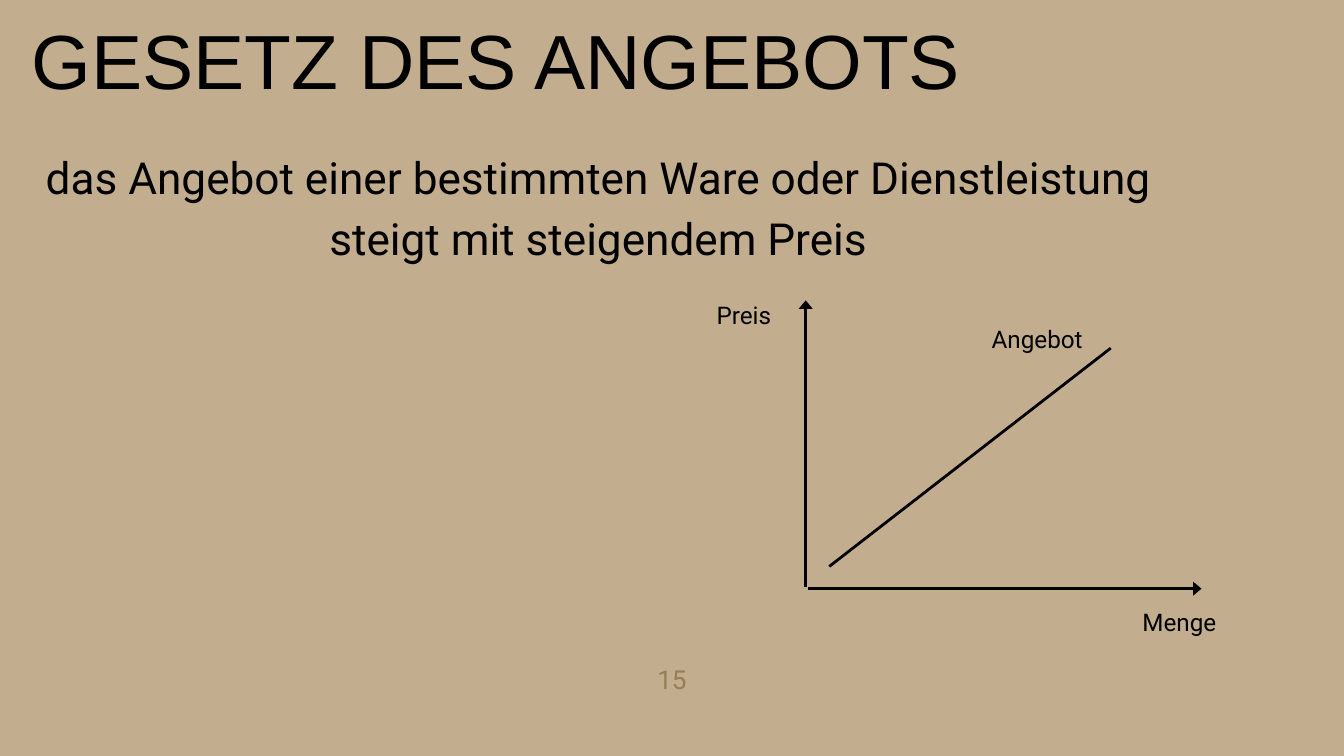
from dataclasses import dataclass

from lxml import etree
from pptx import Presentation
from pptx import util as u
from pptx.dml.color import RGBColor
from pptx.enum import shapes, text
from pptx.oxml.ns import qn


@dataclass(frozen=True)
class Theme:
    background: str = "C2AE8F"
    ink: str = "000000"
    muted: str = "967D55"
    title_font: str = "Arial"
    body_font: str = "Roboto"
    title: float = 82.2
    body: float = 47.3
    label: float = 26
    number: float = 28
    line: float = 3


class SlideBuilder:
    """Draw styled elements on the current slide."""

    def __init__(self, prs, theme):
        self.theme = theme
        self.s = prs.slides.add_slide(prs.slide_layouts[6])
        fill = self.s.background.fill
        fill.solid()
        fill.fore_color.rgb = RGBColor.from_string(theme.background)

    def text(self, content, box, size, spacing, font=None, color=None):
        sp = self.s.shapes.add_textbox(*map(u.Inches, box))
        tf = sp.text_frame
        frame_format = {
            "word_wrap": True,
            "margin_left": 0,
            "margin_right": 0,
            "margin_top": 0,
            "margin_bottom": 0,
            "vertical_anchor": text.MSO_ANCHOR.TOP,
        }
        p = tf.paragraphs[0]
        paragraph_format = {
            "alignment": text.PP_ALIGN.CENTER,
            "line_spacing": u.Pt(spacing),
        }
        r = p.add_run()
        r.text = content
        run_format = {"name": font or self.theme.body_font, "size": u.Pt(size)}
        for target, values in (
            (tf, frame_format),
            (p, paragraph_format),
            (r.font, run_format),
        ):
            for name, value in values.items():
                setattr(target, name, value)
        r.font.color.rgb = RGBColor.from_string(color or self.theme.ink)

    def label(self, content, box):
        self.text(content, box, self.theme.label, 36.4)

    def line(self, start, end, arrow=False):
        points = map(u.Inches, (*start, *end))
        sp = self.s.shapes.add_connector(shapes.MSO_CONNECTOR.STRAIGHT, *points)
        sp.line.color.rgb = RGBColor.from_string(self.theme.ink)
        sp.line.width = u.Pt(self.theme.line)
        if arrow:
            ln = sp.line._get_or_add_ln()
            etree.SubElement(ln, qn("a:tailEnd"), type="triangle", w="lg", len="med")
        etree.SubElement(sp._element.spPr, qn("a:effectLst"))


def main():
    prs = Presentation()
    prs.slide_width, prs.slide_height = u.Inches(20), u.Inches(11.25)
    theme = Theme()
    slide = SlideBuilder(prs, theme)

    slide.text("GESETZ DES ANGEBOTS ", (-0.26, -0.03, 15.61, 1.63),
               theme.title, 115, font=theme.title_font)
    slide.text("das Angebot einer bestimmten Ware oder Dienstleistung "
               "steigt mit steigendem Preis", (0, 2.1, 17.8, 1.83),
               theme.body, 66.2)

    axis_x, axis_y = 11.99, 8.76
    slide.line((axis_x, 8.74), (axis_x, 4.54))
    slide.line((12.02, axis_y), (17.54, axis_y))
    slide.line((axis_x, 5.16), (axis_x, 4.47), arrow=True)
    slide.line((17, axis_y), (17.88, axis_y), arrow=True)

    for content, box in (
        ("Preis", (10.37, 4.39, 1.4, 0.88)),
        ("Angebot", (14.75, 4.75, 1.37, 0.88)),
        ("Menge", (16.95, 8.97, 1.2, 0.5)),
    ):
        slide.label(content, box)
    slide.line((12.34, 8.43), (16.53, 5.18))

    slide.text("15", (6.38, 9.95, 7.24, 1.18), theme.number, 28,
               color=theme.muted)
    prs.save("out.pptx")


if __name__ == "__main__":
    main()
